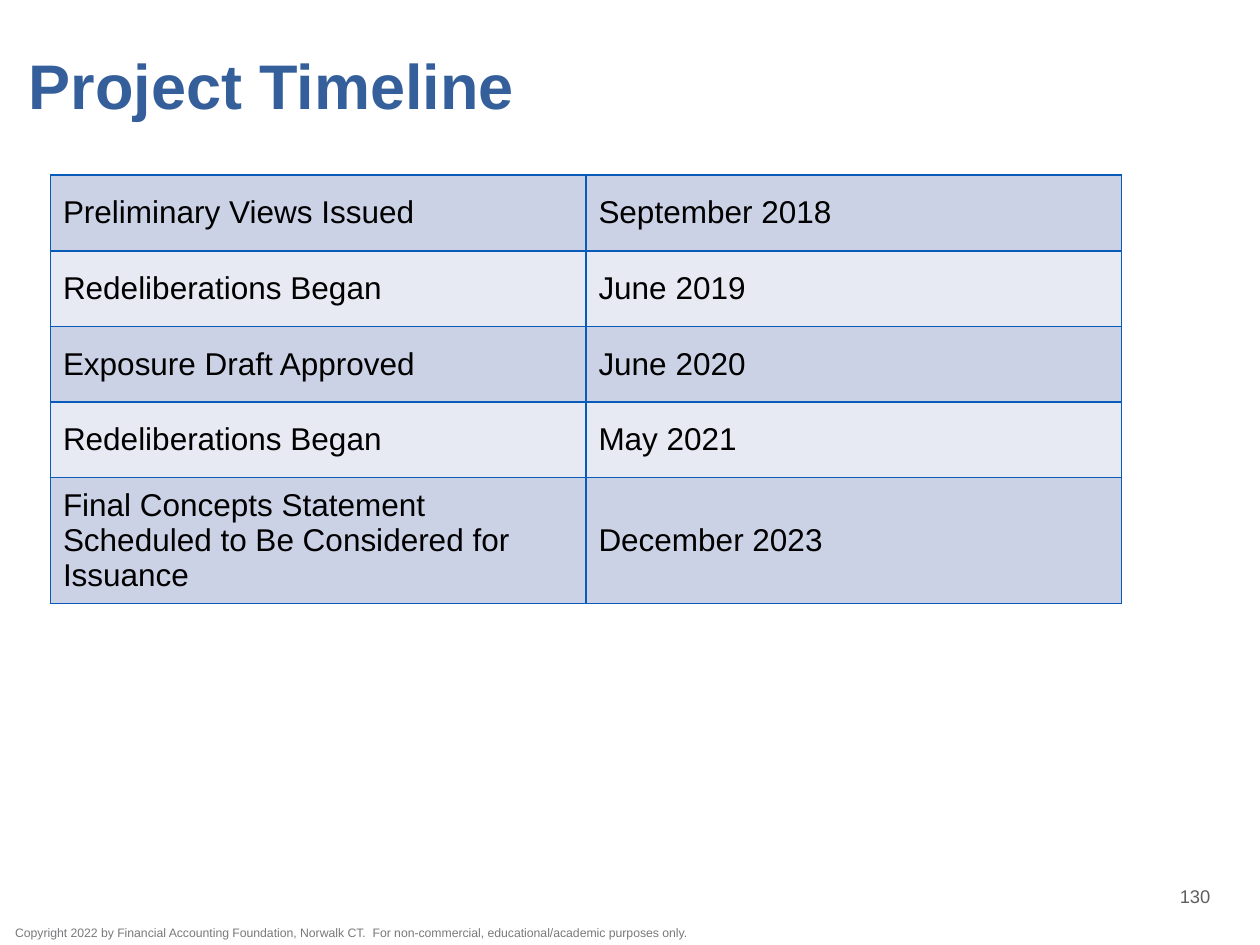
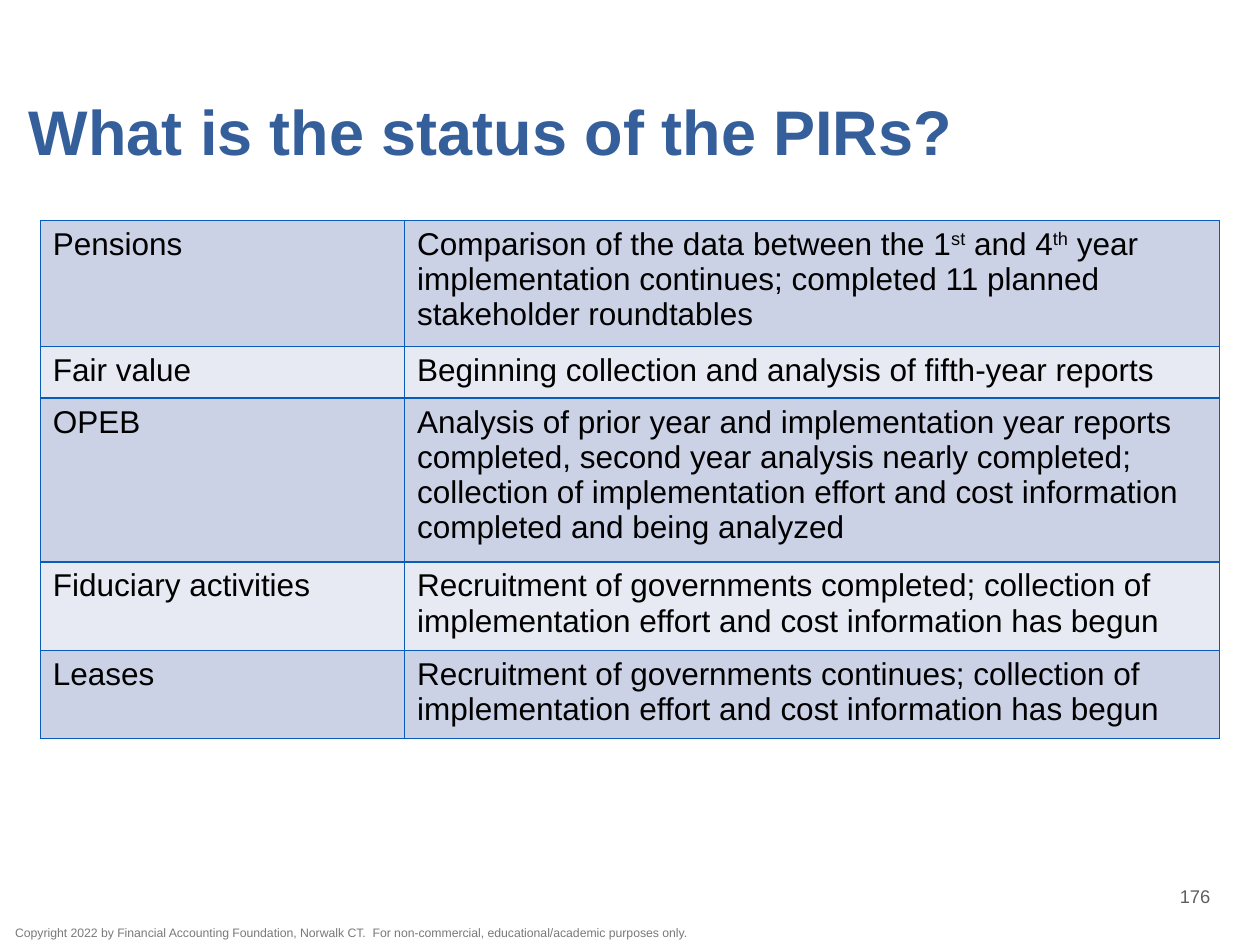
from lxml import etree
from pptx import Presentation
from pptx.dml.color import RGBColor
from pptx.enum import text as tx
from pptx.oxml.ns import qn
from pptx.util import Inches, Pt

FONT = "Arial"
BLUE = RGBColor(0x35, 0x5F, 0x9A)
EDGE = RGBColor(0x08, 0x5B, 0xB8)
BANDS = (RGBColor(0xCC, 0xD2, 0xE6), RGBColor(0xE7, 0xEA, 0xF3))
BLACK = RGBColor(0, 0, 0)
GREY = RGBColor(0x78, 0x79, 0x7B)
DARK = RGBColor(0x5F, 0x5F, 0x5F)
MIDDLE = tx.MSO_ANCHOR.MIDDLE
TOP = tx.MSO_ANCHOR.TOP

NOTICE = ("Copyright 2022 by Financial Accounting Foundation, Norwalk CT.  "
          "For non-commercial, educational/academic purposes only.")

DATES = [
    ("Preliminary Views Issued", "September 2018"),
    ("Redeliberations Began", "June 2019"),
    ("Exposure Draft Approved", "June 2020"),
    ("Redeliberations Began", "May 2021"),
    ("Final Concepts Statement Scheduled to Be Considered for Issuance",
     "December 2023"),
]
# Text between carets is superscript.
REVIEWS = [
    ("Pensions", "Comparison of the data between the 1^st^ and 4^th^ year "
     "implementation continues; completed 11 planned stakeholder roundtables"),
    ("Fair value", "Beginning collection and analysis of fifth-year reports"),
    ("OPEB", "Analysis of prior year and implementation year reports "
     "completed, second year analysis nearly completed; collection of "
     "implementation effort and cost information completed and being analyzed"),
    ("Fiduciary activities", "Recruitment of governments completed; collection "
     "of implementation effort and cost information has begun"),
    ("Leases", "Recruitment of governments continues; collection of "
     "implementation effort and cost information has begun"),
]


def style(para, size, color, bold=False):
    font = para.font
    font.name, font.size, font.bold = FONT, Pt(size), bold
    font.color.rgb = color


def label(slide, box, words, size, color, bold=False, anchor=MIDDLE, inset=0):
    """Add a one-paragraph text box and return its paragraph."""
    frame = slide.shapes.add_textbox(*map(Inches, box)).text_frame
    frame.word_wrap = True
    frame.vertical_anchor = anchor
    frame.margin_left = Inches(inset)
    frame.margin_right = frame.margin_top = frame.margin_bottom = 0
    para = frame.paragraphs[0]
    para.text = words
    style(para, size, color, bold)
    return para


def border(cell):
    props = cell._tc.get_or_add_tcPr()
    for side in ("a:lnL", "a:lnR", "a:lnT", "a:lnB"):
        line = etree.SubElement(props, qn(side), w=str(Pt(1)))
        fill = etree.SubElement(line, qn("a:solidFill"))
        etree.SubElement(fill, qn("a:srgbClr"), val=str(EDGE))


def write(cell, words):
    para = cell.text_frame.paragraphs[0]
    for i, part in enumerate(words.split("^")):
        run = para.add_run()
        run.text = part
        if i % 2:
            run.font._element.set("baseline", "30000")
    style(para, 18, BLACK)


def grid(slide, left, top, widths, heights, rows, anchor):
    """Add a two-tone banded table with its top left corner at left, top."""
    box = (left, top, sum(widths), sum(heights))
    table = slide.shapes.add_table(
        len(rows), len(widths), *map(Inches, box)).table
    table.first_row = table.horz_banding = False
    for col, width in zip(table.columns, widths):
        col.width = Inches(width)
    for r, (row, height) in enumerate(zip(rows, heights)):
        table.rows[r].height = Inches(height)
        for c, words in enumerate(row):
            cell = table.cell(r, c)
            border(cell)
            cell.fill.solid()
            cell.fill.fore_color.rgb = BANDS[r % 2]
            cell.vertical_anchor = anchor
            write(cell, words)


def page(deck, title, top, number):
    """Add a slide with the shared title, notice and page number."""
    slide = deck.slides.add_slide(deck.slide_layouts[6])
    label(slide, (0.12, 7.34, 5.43, 0.14), NOTICE, 7, GREY, anchor=TOP)
    head = label(slide, (0.13, top, 9.49, 0.98), title, 36, BLUE, True,
                 inset=0.1)
    head.line_spacing = Pt(37)
    foot = label(slide, (8.97, 6.95, 1.03, 0.33), number, 10.5, DARK)
    foot.alignment = tx.PP_ALIGN.CENTER
    return slide


def main():
    deck = Presentation()
    deck.slide_width, deck.slide_height = Inches(10), Inches(7.5)
    slide = page(deck, "Project Timeline", 0.22, "130")
    grid(slide, 0.4, 1.39, (4.25, 4.25), [0.6] * 4 + [0.94], DATES, MIDDLE)
    slide = page(deck, "What is the status of the PIRs?", 0.59, "176")
    grid(slide, 0.32, 1.75, (2.89, 6.47), (0.94, 0.41, 1.22, 0.66, 0.66),
         REVIEWS, TOP)
    deck.save("out.pptx")


if __name__ == "__main__":
    main()
